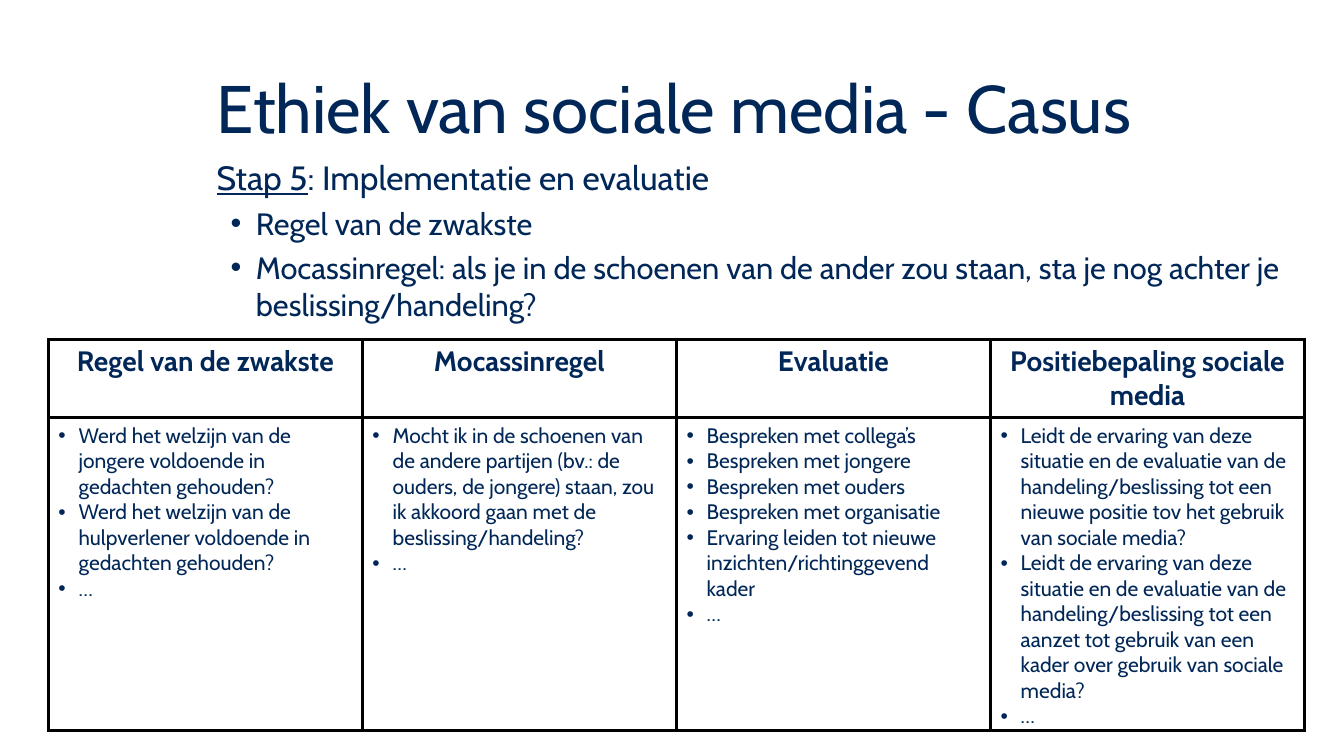
from dataclasses import dataclass

from lxml import etree
from pptx import Presentation
from pptx.dml.color import RGBColor
from pptx.enum.text import MSO_ANCHOR, PP_ALIGN
from pptx.oxml.ns import qn
from pptx.util import Inches, Pt

LEFT, CENTER = PP_ALIGN.LEFT, PP_ALIGN.CENTER
MIDDLE = MSO_ANCHOR.MIDDLE
WIDE, HIGH = Inches(13.33), Inches(7.5)


@dataclass(frozen=True)
class Theme:
    font: str = "Cabin"
    ink: RGBColor = RGBColor(0x00, 0x27, 0x57)
    paper: RGBColor = RGBColor(0xFF, 0xFF, 0xFF)
    line: str = "000000"
    rule: float = 2.25
    title: int = 48
    lead: int = 24
    point: int = 22
    head: int = 20
    cell: int = 15


THEME = Theme()

TITLE = "Ethiek van sociale media - Casus"
POINTS = [
    "Regel van de zwakste",
    "Mocassinregel: als je in de schoenen van de ander zou staan, "
    "sta je nog achter je beslissing/handeling?",
]
SHARED = ("Leidt de ervaring van deze situatie en de evaluatie van de "
          "handeling/beslissing tot een ")
TOPICS = {
    "Regel van de zwakste": [
        "Werd het welzijn van de jongere voldoende in gedachten gehouden?",
        "Werd het welzijn van de hulpverlener voldoende in gedachten gehouden?",
        "…",
    ],
    "Mocassinregel": [
        "Mocht ik in de schoenen van de andere partijen (bv.: de ouders, "
        "de jongere) staan, zou ik akkoord gaan met de beslissing/handeling?",
        "…",
    ],
    "Evaluatie": [
        "Bespreken met collega’s",
        "Bespreken met jongere",
        "Bespreken met ouders",
        "Bespreken met organisatie",
        "Ervaring leiden tot nieuwe inzichten/richtinggevend kader",
        "…",
    ],
    "Positiebepaling sociale media": [
        SHARED + "nieuwe positie tov het gebruik van sociale media?",
        SHARED + "aanzet tot gebruik van een kader over gebruik van sociale media?",
        "…",
    ],
}


def area(left, top, width, height):
    """Turn percentages of the slide into left, top, width and height."""
    return (int(WIDE * left / 100), int(HIGH * top / 100),
            int(WIDE * width / 100), int(HIGH * height / 100))


def write(para, text, size, bold=False, under=False, align=LEFT):
    para.alignment = align
    run = para.add_run()
    run.text = text
    font = run.font
    font.name, font.size = THEME.font, Pt(size)
    font.bold, font.underline = bold, under
    font.color.rgb = THEME.ink


def bullet(para, margin, hang):
    props = para._p.get_or_add_pPr()
    props.set("marL", str(Inches(margin)))
    props.set("indent", str(-Inches(hang)))
    etree.SubElement(props, qn("a:buFont"), typeface="Arial")
    etree.SubElement(props, qn("a:buChar"), char="•")


def border(cell):
    props = cell._tc.get_or_add_tcPr()
    for side in ("lnL", "lnR", "lnT", "lnB"):
        line = etree.SubElement(props, qn("a:" + side), w=str(Pt(THEME.rule)))
        fill = etree.SubElement(line, qn("a:solidFill"))
        etree.SubElement(fill, qn("a:srgbClr"), val=THEME.line)


def add_title(slide):
    title = slide.shapes.title
    title.left, title.top, title.width, title.height = area(15.38, 9.2, 81.62, 11.07)
    frame = title.text_frame
    frame.word_wrap = True
    frame.vertical_anchor = MIDDLE
    para = frame.paragraphs[0]
    para.line_spacing = 0.9
    write(para, TITLE, THEME.title)


def add_intro(slide):
    frame = slide.shapes.add_textbox(*area(15.38, 20.13, 81.62, 69.2)).text_frame
    frame.word_wrap = True
    lead = frame.paragraphs[0]
    write(lead, "Stap 5", THEME.lead, under=True)
    write(lead, ": Implementatie en evaluatie", THEME.lead)
    for point in POINTS:
        para = frame.add_paragraph()
        bullet(para, margin=0.39, hang=0.25)
        para.space_before = Pt(5)
        write(para, point, THEME.point)


def add_topics(slide):
    place = area(3.6, 44.93, 93.47, 51.6)
    table = slide.shapes.add_table(2, len(TOPICS), *place).table
    table.first_row = table.horz_banding = False
    table.rows[0].height = int(place[3] * 0.2)
    table.rows[1].height = int(place[3] * 0.8)
    for cell in table.iter_cells():
        border(cell)
        cell.fill.solid()
        cell.fill.fore_color.rgb = THEME.paper
    for col, (head, items) in enumerate(TOPICS.items()):
        write(table.cell(0, col).text_frame.paragraphs[0], head,
              THEME.head, bold=True, align=CENTER)
        frame = table.cell(1, col).text_frame
        for row, item in enumerate(items):
            para = frame.add_paragraph() if row else frame.paragraphs[0]
            bullet(para, margin=0.2, hang=0.2)
            write(para, item, THEME.cell)


def main():
    deck = Presentation()
    deck.slide_width, deck.slide_height = WIDE, HIGH
    slide = deck.slides.add_slide(deck.slide_layouts.get_by_name("Title Only"))
    add_title(slide)
    add_intro(slide)
    add_topics(slide)
    deck.save("out.pptx")


if __name__ == "__main__":
    main()
